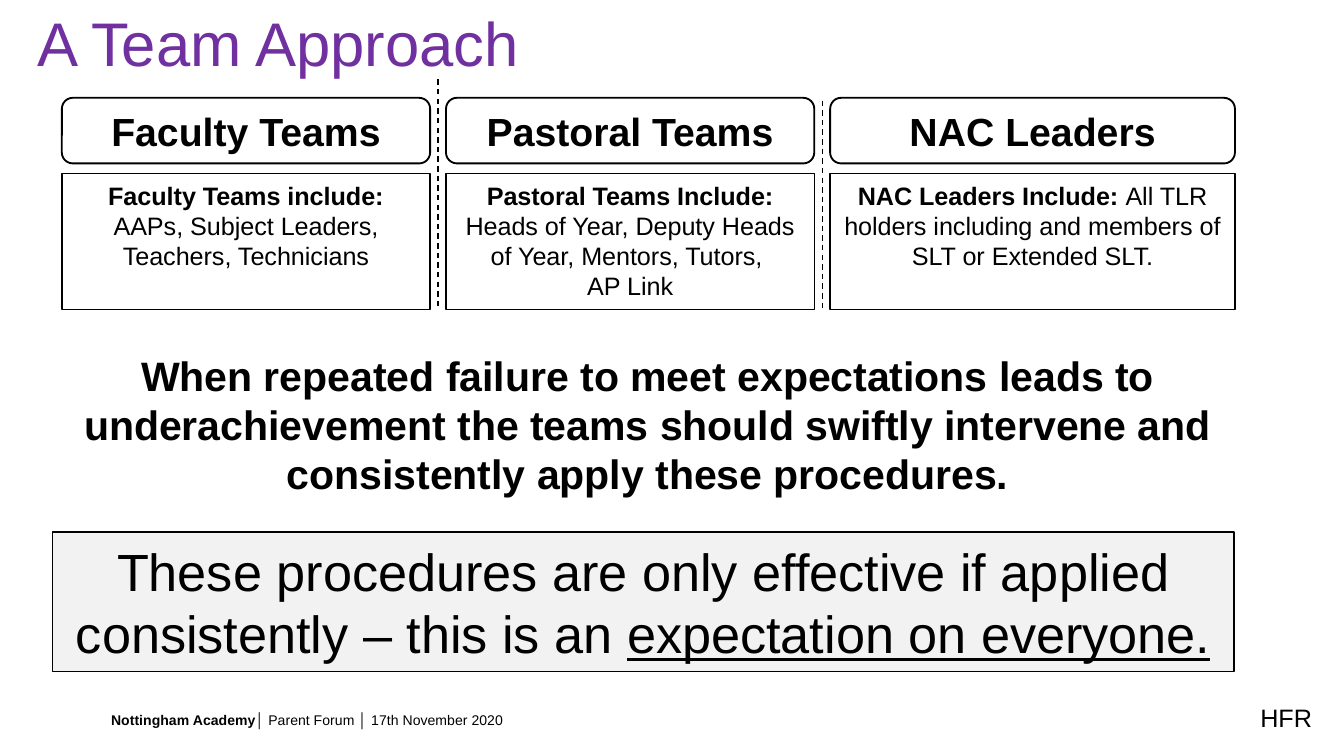
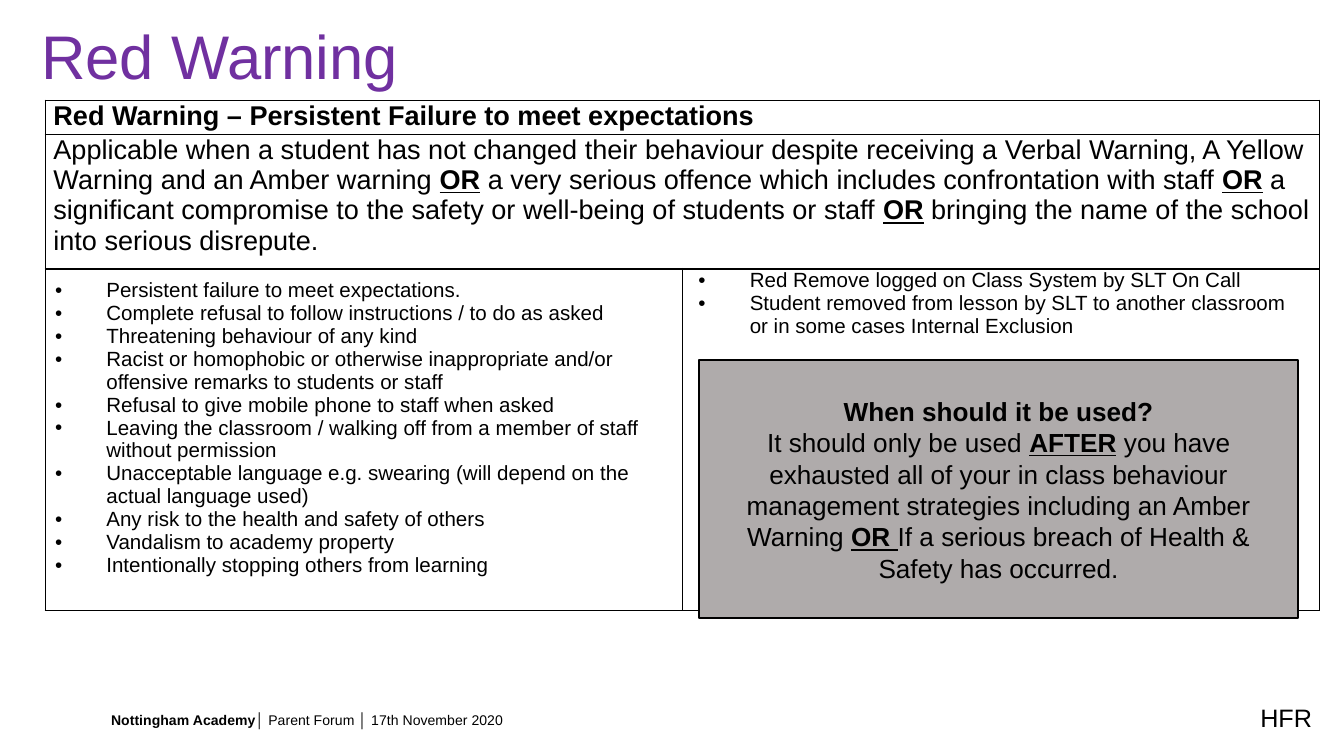
"""Build two school forum slides on team work and red warnings."""
from dataclasses import dataclass
from typing import Any

from lxml import etree
from pptx import Presentation
from pptx import util as u
from pptx.dml import color
from pptx.enum import dml, shapes, text
from pptx.oxml import ns

HUES = {"ink": "000000", "title": "7030A0", "white": "FFFFFF", "pale": "F2F2F2", "grey": "AFABAB"}
FONT = "Arial"
MID = text.MSO_ANCHOR.MIDDLE
TOP = text.MSO_ANCHOR.TOP
LEFT = text.PP_ALIGN.LEFT
CENTER = text.PP_ALIGN.CENTER
RECT = shapes.MSO_SHAPE.RECTANGLE
ROUND = shapes.MSO_SHAPE.ROUNDED_RECTANGLE

Run = tuple[str, str]
Para = list[Run]


@dataclass
class Place:
    left: float
    top: float
    width: float
    height: float

    def spots(self) -> list[int]:
        return [u.Cm(v) for v in (self.left, self.top, self.width, self.height)]


@dataclass
class Style:
    size: float
    hue: str = "ink"
    align: Any = LEFT
    anchor: Any = TOP
    pitch: float | None = None
    bullet: bool = False


@dataclass
class Look:
    kind: Any
    line: float
    fill: str | None = None


@dataclass
class Team:
    name: str
    width: float
    lead: str
    who: str


@dataclass
class Cell:
    row: int
    col: int
    pads: tuple[float, float]
    style: Style
    paras: list[Para]


def rgb(hue: str) -> color.RGBColor:
    return color.RGBColor.from_string(HUES[hue])


def apply(item: Any, form: dict[str, Any]) -> None:
    for key, value in form.items():
        setattr(item, key, value)


def add_bullet(para: Any) -> None:
    props = para._p.get_or_add_pPr()
    apply_xml = {"marL": u.Cm(0.97), "indent": u.Cm(-0.97)}
    for key, value in apply_xml.items():
        props.set(key, str(int(value)))
    etree.SubElement(props, ns.qn("a:buFont")).set("typeface", FONT)
    etree.SubElement(props, ns.qn("a:buChar")).set("char", "•")


def write(frame: Any, paras: list[Para], style: Style) -> None:
    frame.word_wrap = True
    for num, runs in enumerate(paras):
        para = frame.add_paragraph() if num else frame.paragraphs[0]
        apply(para, {"alignment": style.align, "line_spacing": style.pitch})
        if style.bullet:
            add_bullet(para)
        for words, marks in runs:
            for part, line in enumerate(words.split("\n")):
                if part:
                    para.add_line_break()
                run = para.add_run()
                run.text = line
                apply(run.font, {"name": FONT, "size": u.Pt(style.size),
                                 "bold": "b" in marks, "underline": "u" in marks})
                run.font.color.rgb = rgb(style.hue)


def add_text(slide: Any, place: Place, paras: list[Para], style: Style) -> None:
    frame = slide.shapes.add_textbox(*place.spots()).text_frame
    frame.vertical_anchor = style.anchor
    write(frame, paras, style)


def add_box(slide: Any, place: Place, look: Look, paras: list[Para], style: Style) -> None:
    shape = slide.shapes.add_shape(look.kind, *place.spots())
    shape.shadow.inherit = False
    if look.fill:
        shape.fill.solid()
        shape.fill.fore_color.rgb = rgb(look.fill)
    else:
        shape.fill.background()
    shape.line.color.rgb = rgb("ink")
    shape.line.width = u.Pt(look.line)
    shape.text_frame.vertical_anchor = style.anchor
    write(shape.text_frame, paras, style)


def add_dash(slide: Any, left: float, top: float, end: float) -> None:
    line = slide.shapes.add_connector(shapes.MSO_CONNECTOR.STRAIGHT,
                                      u.Cm(left), u.Cm(top), u.Cm(left), u.Cm(end))
    line.line.color.rgb = rgb("ink")
    apply(line.line, {"width": u.Pt(0.75), "dash_style": dml.MSO_LINE.DASH})
    etree.SubElement(line._element.spPr, ns.qn("a:effectLst"))


def add_edges(cell: Any) -> None:
    props = cell._tc.get_or_add_tcPr()
    for side in ("lnL", "lnR", "lnT", "lnB"):
        edge = etree.SubElement(props, ns.qn(f"a:{side}"), w=str(int(u.Pt(1))))
        fill = etree.SubElement(edge, ns.qn("a:solidFill"))
        etree.SubElement(fill, ns.qn("a:srgbClr"), val=HUES["ink"])


def add_grid(slide: Any, place: Place, rows: list[float], cols: list[float],
             cells: list[Cell]) -> None:
    grid = slide.shapes.add_table(len(rows), len(cols), *place.spots()).table
    apply(grid, {"first_row": False, "horz_banding": False})
    for row, height in zip(grid.rows, rows):
        row.height = u.Cm(height)
    for col, width in zip(grid.columns, cols):
        col.width = u.Cm(width)
    for cell in grid.iter_cells():
        add_edges(cell)
        cell.fill.solid()
        cell.fill.fore_color.rgb = rgb("white")
    for num in range(2):
        grid.cell(num, 0).merge(grid.cell(num, 1))
    for item in cells:
        cell = grid.cell(item.row, item.col)
        side, edge = (u.Cm(v) for v in item.pads)
        apply(cell, {"margin_left": side, "margin_right": side,
                     "margin_top": edge, "margin_bottom": edge})
        write(cell.text_frame, item.paras, item.style)


def start(deck: Any, title: str, left: float, top: float) -> Any:
    slide = deck.slides.add_slide(deck.slide_layouts[6])
    add_text(slide, Place(1.85, 13.23, 13.34, 0.74),
             [[("Nottingham Academy│ ", "b"), ("Parent Forum │ 17th November 2020", "")]],
             Style(7.5, anchor=MID))
    add_text(slide, Place(left, top, 21.9, 2.77), [[(title, "")]],
             Style(33, "title", anchor=MID, pitch=0.9))
    add_text(slide, Place(23.57, 13.16, 1.83, 0.84), [[("HFR", "")]], Style(13.5))
    return slide


TEAMS = [
    Team("Faculty Teams", 6.96, "Faculty Teams include: ",
         "AAPs, Subject Leaders, Teachers, Technicians"),
    Team("Pastoral Teams", 6.96, "Pastoral Teams Include: ",
         "Heads of Year, Deputy Heads of Year, Mentors, Tutors, \nAP Link"),
    Team("NAC Leaders", 7.65, "NAC Leaders Include: ",
         "All TLR holders including and members of SLT or Extended SLT."),
]

CAUSES = [
    "Persistent failure to meet expectations.",
    "Complete refusal to follow instructions / to do as asked",
    "Threatening behaviour of any kind",
    "Racist or homophobic or otherwise inappropriate and/or offensive remarks to students or staff",
    "Refusal to give mobile phone to staff when asked",
    "Leaving the classroom / walking off from a member of staff without permission",
    "Unacceptable language e.g. swearing (will depend on the actual language used)",
    "Any risk to the health and safety of others",
    "Vandalism to academy property",
    "Intentionally stopping others from learning",
]

STEPS = [
    "Red Remove logged on Class System by SLT On Call",
    "Student removed from lesson by SLT to another classroom or in some cases Internal Exclusion",
]

SCOPE = [
    ("Applicable when a student has not changed their behaviour despite receiving "
     "a Verbal Warning, A Yellow Warning and an Amber warning ", ""),
    ("OR", "bu"),
    (" a very serious offence which includes confrontation with staff ", ""),
    ("OR", "bu"),
    (" a significant compromise to the safety or well-being of students or staff ", ""),
    ("OR", "bu"),
    (" bringing the name of the school into serious disrepute.", ""),
]

USE = [
    [("When should it be used?", "b")],
    [("It should only be used ", ""), ("AFTER", "bu"),
     (" you have exhausted all of your in class behaviour management strategies "
      "including an Amber Warning ", ""),
     ("OR ", "bu"), ("If a serious breach of Health & Safety has occurred.", "")],
]


def draw_teams(deck: Any) -> None:
    slide = start(deck, "A Team Approach", 0.46, -0.51)
    left, gap = 1.17, 0.3
    for num, team in enumerate(TEAMS):
        add_box(slide, Place(left, 1.85, team.width, 1.24), Look(ROUND, 1),
                [[(team.name, "b")]], Style(21, align=CENTER, anchor=MID))
        add_box(slide, Place(left, 3.28, team.width, 2.57), Look(RECT, 0.75),
                [[(team.lead, "b"), (team.who, "")]], Style(13.5, align=CENTER))
        if num:
            add_dash(slide, left - gap / 2, 1.5 if num == 1 else 1.9, 5.84)
        left += team.width + gap
    add_text(slide, Place(1.17, 6.5, 22.15, 3.07),
             [[("When repeated failure to meet expectations leads to underachievement the teams "
                "should swiftly intervene and consistently apply these procedures.", "b")]],
             Style(22, align=CENTER))
    add_box(slide, Place(0.99, 10.06, 22.33, 2.64), Look(RECT, 0.75, "pale"),
            [[("These procedures are only effective if applied consistently – this is an ", ""),
              ("expectation on everyone.", "u")]], Style(28, align=CENTER))


def draw_red(deck: Any) -> None:
    slide = start(deck, "Red Warning", 0.53, -0.25)
    head, points = Style(14.5), Style(11, bullet=True)
    cells = [
        Cell(0, 0, (0.15, 0), head,
             [[("Red Warning – Persistent Failure to meet expectations", "b")]]),
        Cell(1, 0, (0.15, 0), head, [SCOPE]),
        Cell(2, 0, (0.18, 0.2), points, [[(cause, "")] for cause in CAUSES]),
        Cell(2, 1, (0.3, 0), points, [[(step, "")] for step in STEPS]),
    ]
    add_grid(slide, Place(0.86, 1.9, 24.08, 9.63), [0.64, 2.54, 6.45], [12.04, 12.04], cells)
    add_box(slide, Place(13.21, 6.81, 11.33, 4.88), Look(RECT, 1, "grey"), USE,
            Style(14, align=CENTER, anchor=MID))


def main() -> None:
    deck = Presentation()
    apply(deck, {"slide_width": u.Cm(25.4), "slide_height": u.Cm(14.29)})
    draw_teams(deck)
    draw_red(deck)
    deck.save("out.pptx")


if __name__ == "__main__":
    main()
